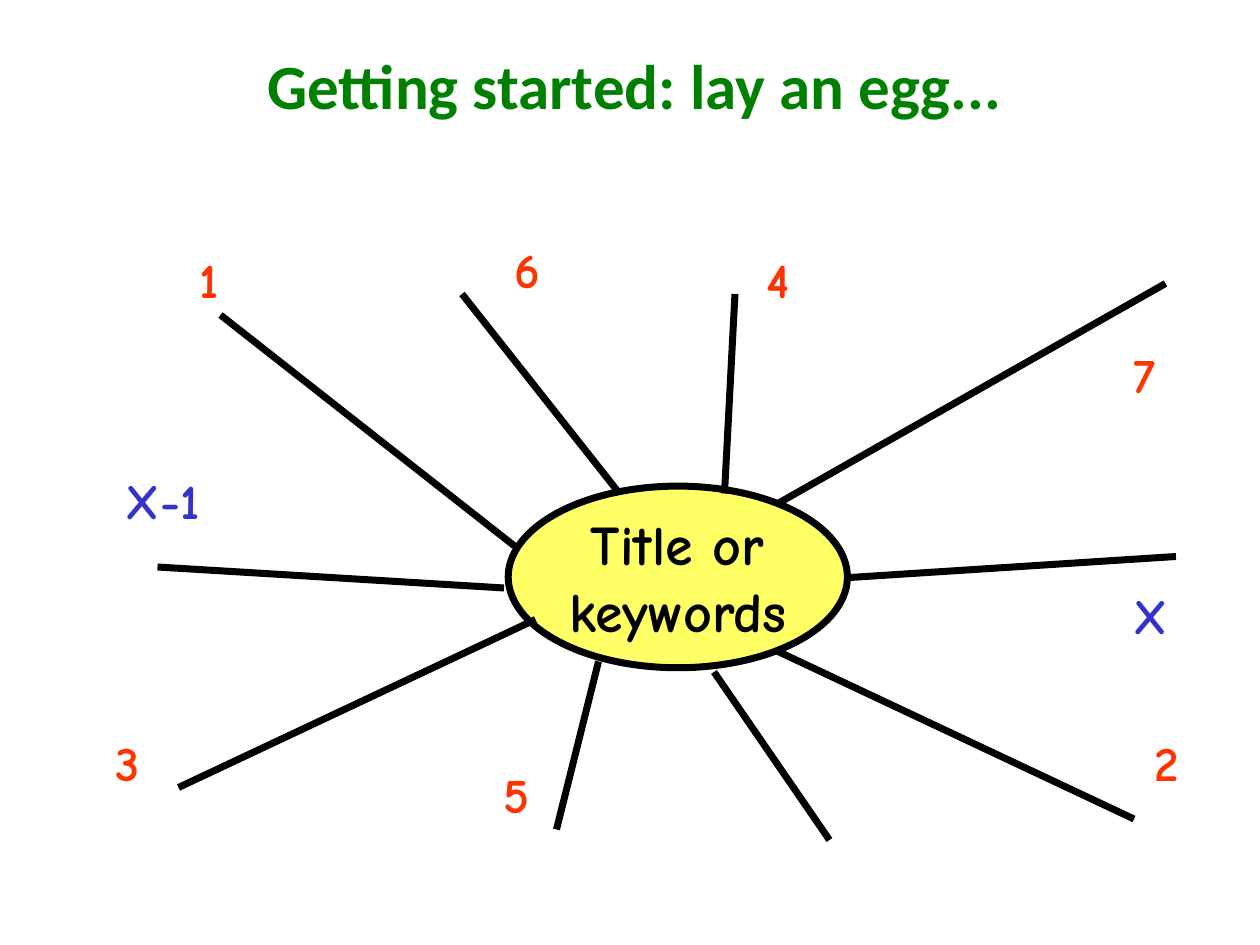
from lxml.etree import SubElement
from pptx import Presentation
from pptx.dml.color import RGBColor
from pptx.enum.shapes import MSO_CONNECTOR, MSO_SHAPE
from pptx.enum.text import MSO_ANCHOR, MSO_AUTO_SIZE, PP_ALIGN
from pptx.oxml.ns import qn
from pptx.util import Inches, Pt

COLORS = {"title": "008000", "egg": "FFFF66", "ink": "000000",
          "number": "FF3300", "unknown": "3333CC"}
HAND_FONT = "Comic Neue"
LINE_WIDTH = Pt(4)
LABEL_OFFSET = 0.2

# All places are columns and rows of a grid with twelve cells to the inch.
SPOKES = [
    ((49, 52), (21, 30)), ((74, 62), (108, 78)), ((74, 48), (111, 27)),
    ((51, 59), (17, 75)), ((57, 63), (53, 79)), ((68, 64), (79, 80)),
    ((59, 47), (44, 28)), ((48, 56), (15, 54)), ((81, 55), (112, 53)),
    ((69, 47), (70, 28)),
]
LABELS = [  # text, column, row, width in columns, color
    ("1", 18, 23, 5.3, "number"), ("2", 109, 69, 5.3, "number"),
    ("3", 10, 69, 5.3, "number"), ("4", 72, 23, 5.3, "number"),
    ("5", 47, 72, 5.3, "number"), ("6", 48, 22, 5.3, "number"),
    ("X", 107, 55, 5.8, "unknown"), ("X-1", 11, 44, 11.5, "unknown"),
    ("7", 107, 32, 5.3, "number"),
]


def cells(*counts):
    return [Inches(count / 12) for count in counts]


def color(name):
    return RGBColor.from_string(COLORS[name])


def format_text(text_frame, font_name, size, color_name, alignment):
    for paragraph in text_frame.paragraphs:
        paragraph.alignment = alignment
        for run in paragraph.runs:
            run.font.name = font_name
            run.font.size = Pt(size)
            run.font.bold = True
            run.font.color.rgb = color(color_name)


def set_title(slide, text):
    title = slide.shapes.title
    title.left, title.top = Inches(0.27), Inches(0.21)
    title.width, title.height = Inches(9.53), Inches(1.02)
    text_frame = title.text_frame
    text_frame.text = text
    text_frame.vertical_anchor = MSO_ANCHOR.MIDDLE
    text_frame.paragraphs[0].line_spacing = 0.85
    format_text(text_frame, "Calibri", 36, "title", PP_ALIGN.CENTER)


def add_egg(slide, text):
    egg = slide.shapes.add_shape(MSO_SHAPE.OVAL, *cells(48.4, 46.3, 32.3, 17.3))
    egg.shadow.inherit = False
    egg.fill.solid()
    egg.fill.fore_color.rgb = color("egg")
    egg.line.color.rgb = color("ink")
    egg.line.width = LINE_WIDTH
    egg.text_frame.text = text
    egg.text_frame.word_wrap = False
    egg.text_frame.vertical_anchor = MSO_ANCHOR.MIDDLE
    format_text(egg.text_frame, HAND_FONT, 32, "ink", PP_ALIGN.CENTER)


def add_spoke(slide, start, end):
    spoke = slide.shapes.add_connector(MSO_CONNECTOR.STRAIGHT, *cells(*start, *end))
    spoke.line.color.rgb = color("ink")
    spoke.line.width = LINE_WIDTH
    SubElement(spoke._element.spPr, qn("a:effectLst"))


def add_label(slide, text, column, row, width, color_name):
    label = slide.shapes.add_textbox(
        *cells(column - LABEL_OFFSET, row + LABEL_OFFSET, width, 6.8))
    text_frame = label.text_frame
    text_frame.text = text
    text_frame.word_wrap = False
    text_frame.auto_size = MSO_AUTO_SIZE.SHAPE_TO_FIT_TEXT
    format_text(text_frame, HAND_FONT, 28, color_name, PP_ALIGN.LEFT)


def main():
    presentation = Presentation()
    presentation.slide_width, presentation.slide_height = Inches(10), Inches(7.5)
    slide = presentation.slides.add_slide(presentation.slide_layouts[5])
    set_title(slide, "Getting started: lay an egg...")
    add_egg(slide, "Title or\nkeywords")
    for start, end in SPOKES:
        add_spoke(slide, start, end)
    for label in LABELS:
        add_label(slide, *label)
    presentation.save("out.pptx")


if __name__ == "__main__":
    main()
